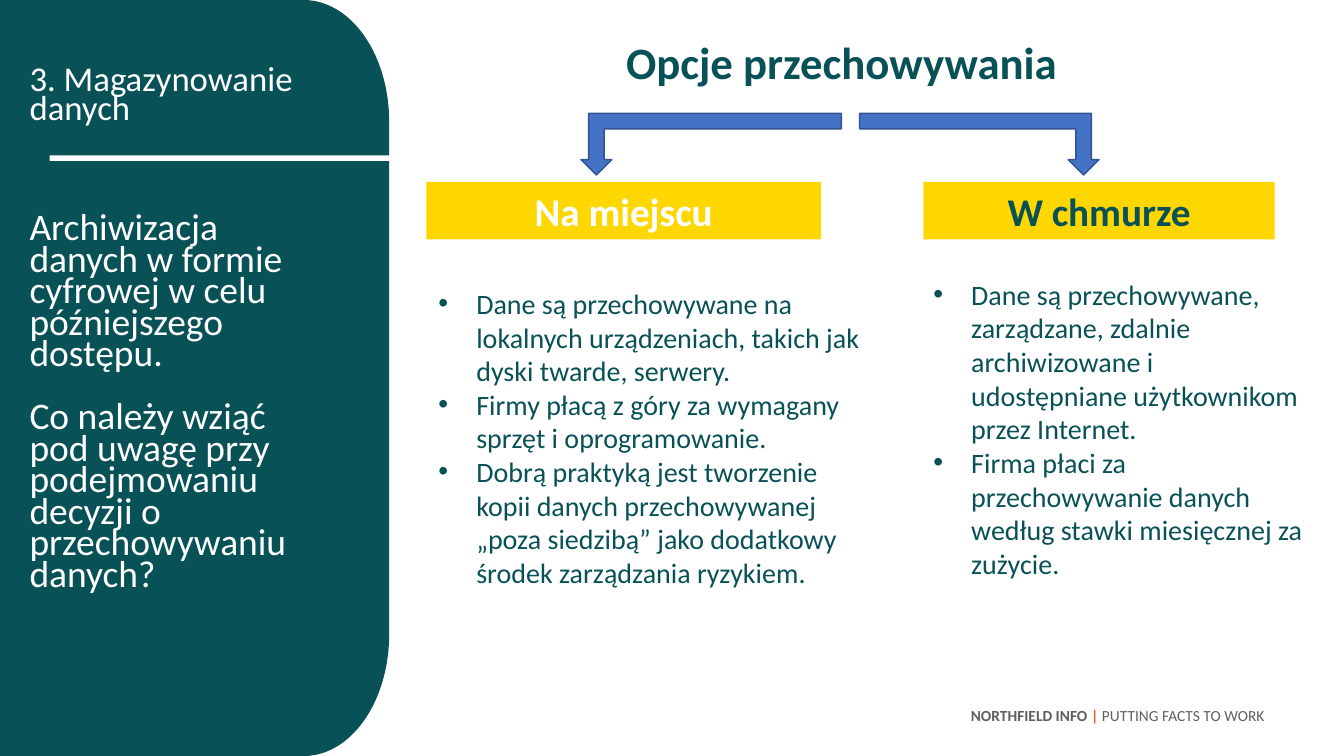
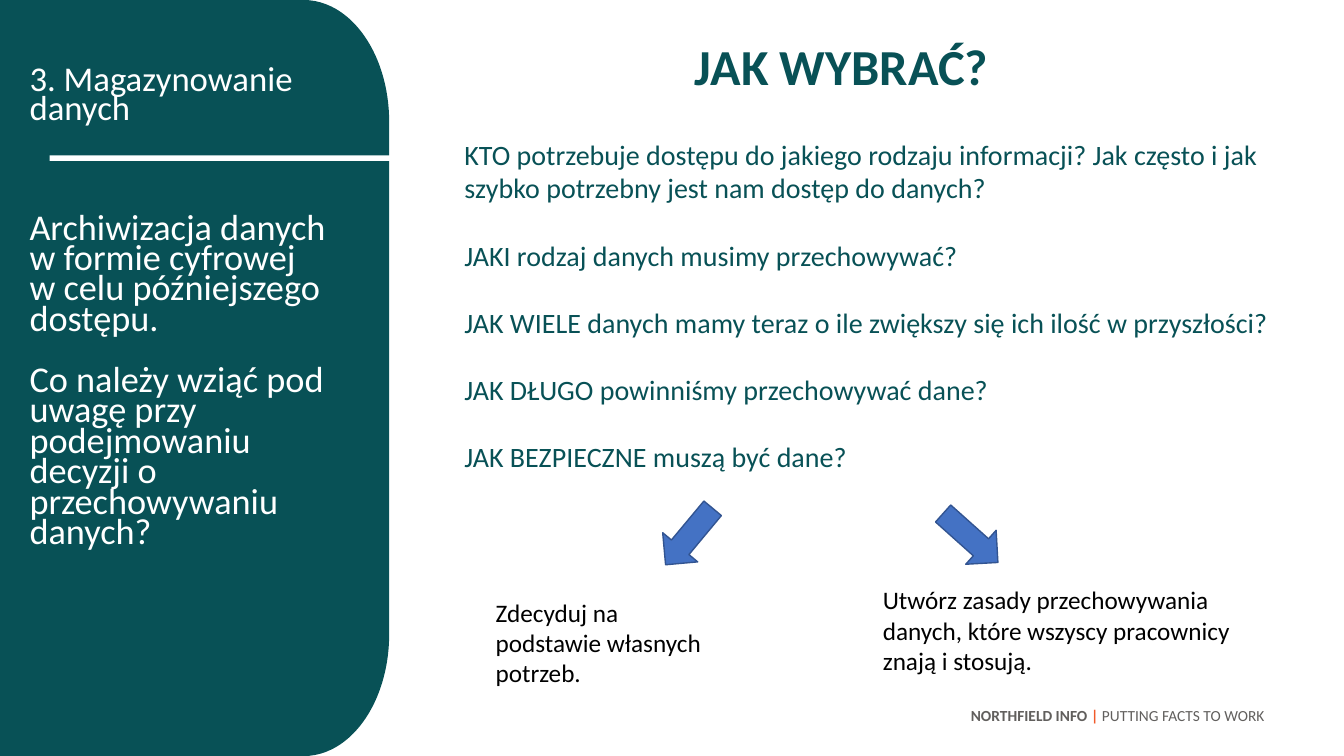
import pptx
import pptx.util
import pptx.dml.color
import pptx.enum.shapes
import pptx.enum.text
import pptx.oxml.ns
from lxml import etree

Pt = pptx.util.Pt
SHAPE = pptx.enum.shapes.MSO_SHAPE
ALIGN = pptx.enum.text.PP_ALIGN
ANCHOR = pptx.enum.text.MSO_ANCHOR
qn = pptx.oxml.ns.qn

FONT = "Calibri"
TEAL, YELLOW, WHITE, BLACK = "085156", "FFD700", "FFFFFF", "000000"
BLUE, BLUE_EDGE = "4472C4", "325491"
GREY, ORANGE = "615F5D", "F15A2A"
LINE = 1.2  # line height of the font, relative to its size
TIGHT = 0.7  # line spacing in the side panel
INDENT = 27

CHAPTER = "3. Magazynowanie danych"
SUMMARY = [
    "Archiwizacja danych w formie cyfrowej w celu późniejszego dostępu.",
    "Co należy wziąć pod uwagę przy podejmowaniu decyzji o przechowywaniu danych?",
]
FOOTER = [("NORTHFIELD INFO ", GREY, True), ("|", ORANGE, True),
          (" PUTTING FACTS TO WORK", GREY, False)]

# Boxes are left, top, width, height in points.
OPTIONS = [
    dict(name="Na miejscu", color=WHITE, banner=(304.5, 130, 282, 41),
         arrow=(415, 81, 186, 44), mirrored=False, list_box=(306, 201, 316, 274),
         points=[
             "Dane są przechowywane na lokalnych urządzeniach, takich jak dyski twarde, serwery.",
             "Firmy płacą z góry za wymagany sprzęt i oprogramowanie.",
             "Dobrą praktyką jest tworzenie kopii danych przechowywanej „poza siedzibą” "
             "jako dodatkowy środek zarządzania ryzykiem.",
         ]),
    dict(name="W chmurze", color=TEAL, banner=(659.5, 130, 251, 41),
         arrow=(614, 81, 171, 44), mirrored=True, list_box=(659.5, 194.5, 281.5, 225),
         points=[
             "Dane są przechowywane, zarządzane, zdalnie archiwizowane i "
             "udostępniane użytkownikom przez Internet.",
             "Firma płaci za przechowywanie danych według stawki miesięcznej za zużycie.",
         ]),
]
QUESTIONS = [
    "KTO potrzebuje dostępu do jakiego rodzaju informacji? Jak często i jak szybko "
    "potrzebny jest nam dostęp do danych?",
    "JAKI rodzaj danych musimy przechowywać?",
    "JAK WIELE danych mamy teraz o ile zwiększy się ich ilość w przyszłości?",
    "JAK DŁUGO powinniśmy przechowywać dane?",
    "JAK BEZPIECZNE muszą być dane?",
]
OUTCOMES = [
    ("Zdecyduj na podstawie własnych potrzeb.",
     (347, 423, 171.5, 73), (476, 357, 32.5, 52.5), 39.8),
    ("Utwórz zasady przechowywania danych, które wszyscy pracownicy znają i stosują.",
     (623.5, 414, 275, 73), (677, 358, 32.5, 52.5), 311.8),
]


def rgb(color):
    return pptx.dml.color.RGBColor.from_string(color)


def style_run(run, size, color, bold=False):
    run.font.name, run.font.size, run.font.bold = FONT, Pt(size), bold
    run.font.color.rgb = rgb(color)


def write(shape, texts, size, color, bold=False, align=ALIGN.LEFT,
          anchor=ANCHOR.TOP, gap=0, spacing=1.0):
    """Fill a shape with one paragraph per text; gap separates paragraphs."""
    frame = shape.text_frame
    frame.text = "\n".join(texts)
    frame.word_wrap = True
    frame.auto_size = pptx.enum.text.MSO_AUTO_SIZE.NONE
    frame.vertical_anchor = anchor
    for index, paragraph in enumerate(frame.paragraphs):
        paragraph.alignment = align
        paragraph.line_spacing = spacing
        paragraph.space_before = Pt(gap if index else 0)
        for run in paragraph.runs:
            style_run(run, size, color, bold)


def set_bullets(shape, bullet):
    """Give every paragraph the bullet with a hanging indent, or neither."""
    indent = INDENT if bullet else 0
    for paragraph in shape.text_frame.paragraphs:
        properties = paragraph._p.get_or_add_pPr()
        properties.set("marL", str(Pt(indent)))
        properties.set("indent", str(-Pt(indent)))
        if bullet:
            etree.SubElement(properties, qn("a:buFont")).set("typeface", "Arial")
            etree.SubElement(properties, qn("a:buChar")).set("char", bullet)
        else:
            etree.SubElement(properties, qn("a:buNone"))


def place(shape, box):
    shape.left, shape.top, shape.width, shape.height = map(Pt, box)


def add_block(slide, kind, box, fill, edge=None, rotation=0):
    block = slide.shapes.add_shape(kind, *map(Pt, box))
    block.shadow.inherit = False
    block.rotation = rotation
    block.fill.solid()
    block.fill.fore_color.rgb = rgb(fill)
    if edge:
        block.line.color.rgb = rgb(edge)
        block.line.width = Pt(1)
    else:
        block.line.fill.background()
    return block


def add_text(slide, box, texts, size, color, **style):
    label = slide.shapes.add_textbox(*map(Pt, box))
    write(label, texts, size, color, **style)
    return label


def add_slide(deck, layout, title, title_size, summary_size):
    """Add a slide with its title, side panel and footer."""
    slide = deck.slides.add_slide(deck.slide_layouts.get_by_name(layout))
    place(slide.shapes.title, (430, 21.5, 342.5, 50))
    write(slide.shapes.title, [title], title_size, TEAL, bold=True, align=ALIGN.CENTER)

    add_block(slide, SHAPE.RECTANGLE, (0, 0, 217, 540), TEAL)
    add_block(slide, SHAPE.FLOWCHART_TERMINATOR, (-53, 209, 540, 122), TEAL, rotation=270)
    add_block(slide, SHAPE.RECTANGLE, (35.5, 111, 272, 4), WHITE)
    add_text(slide, (14, 45, 214.5, 55), [CHAPTER], 24.8, WHITE, spacing=TIGHT)
    add_text(slide, (14, 150.5, 226, 286.5), SUMMARY, summary_size, WHITE,
             spacing=TIGHT, gap=round(summary_size * LINE * TIGHT, 1))

    footer = add_text(slide, (40.5, 500.5, 870, 32), [""], 11, GREY, align=ALIGN.RIGHT)
    for text, color, bold in FOOTER:
        run = footer.text_frame.paragraphs[0].add_run()
        run.text = text
        style_run(run, 11, color, bold)
    return slide


def build_options(deck):
    slide = add_slide(deck, "Two Content", "Opcje przechowywania", 32, 26.8)
    for number, option in enumerate(OPTIONS, start=1):
        banner = add_block(slide, SHAPE.RECTANGLE, option["banner"], YELLOW)
        write(banner, [option["name"]], 28, option["color"], bold=True,
              align=ALIGN.CENTER, anchor=ANCHOR.MIDDLE)
        arrow = add_block(slide, SHAPE.BENT_UP_ARROW, option["arrow"], BLUE,
                          BLUE_EDGE, rotation=180)
        if option["mirrored"]:
            arrow.element.spPr.find(qn("a:xfrm")).set("flipH", "1")
        points = slide.placeholders[number]
        place(points, option["list_box"])
        write(points, option["points"], 20, TEAL)
        set_bullets(points, "•")


def build_questions(deck):
    slide = add_slide(deck, "Title and Content", "JAK WYBRAĆ?", 36, 25.9)
    questions = slide.placeholders[1]
    place(questions, (324.5, 94.5, 635, 250))
    write(questions, QUESTIONS, 20, TEAL, gap=20 * LINE)
    set_bullets(questions, None)
    for outcome, text_box, arrow_box, rotation in OUTCOMES:
        add_block(slide, SHAPE.DOWN_ARROW, arrow_box, BLUE, BLUE_EDGE, rotation)
        add_text(slide, text_box, [outcome], 18, BLACK)


def main():
    deck = pptx.Presentation()
    deck.slide_width, deck.slide_height = Pt(960), Pt(540)
    build_options(deck)
    build_questions(deck)
    deck.save("out.pptx")


if __name__ == "__main__":
    main()
